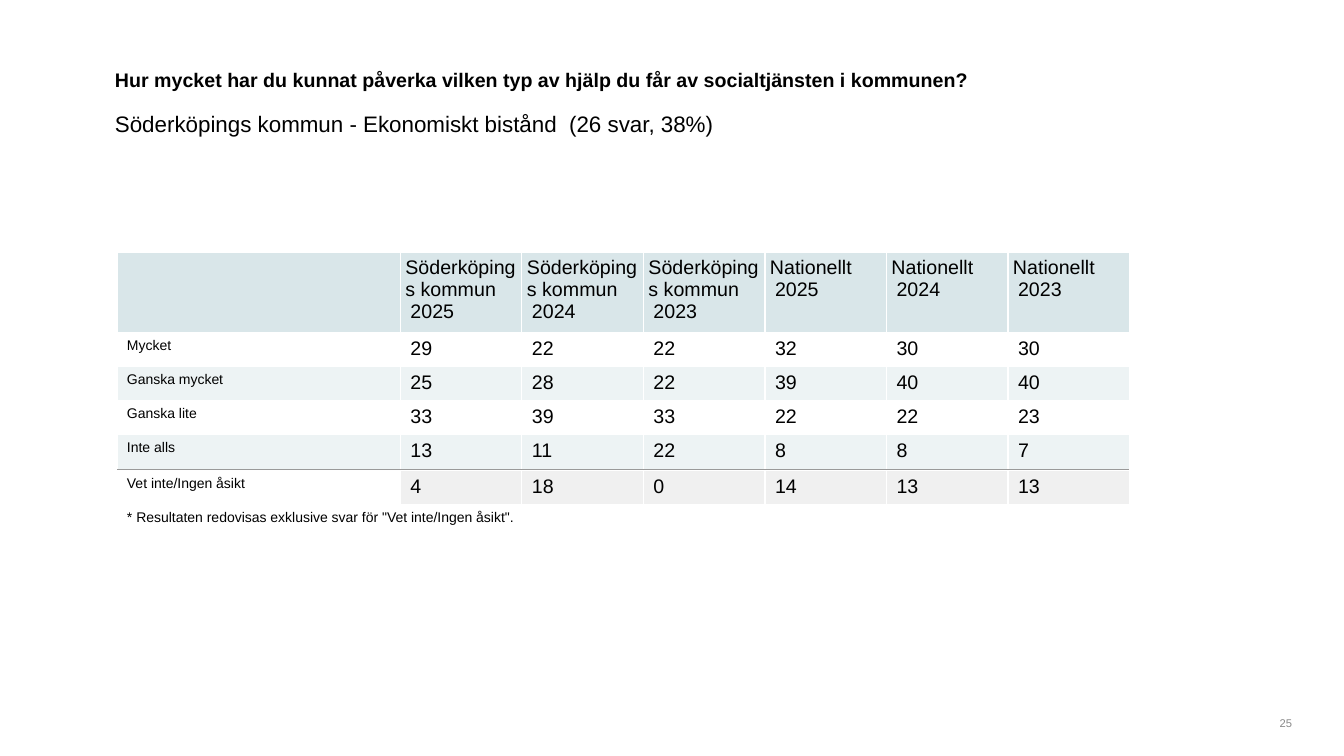
from lxml.etree import SubElement
from pptx import Presentation
from pptx.dml.color import RGBColor
from pptx.enum.text import MSO_ANCHOR, PP_ALIGN
from pptx.oxml.ns import qn
from pptx.util import Pt

BLACK = RGBColor(0x00, 0x00, 0x00)
PAGE_GREY = RGBColor(0x89, 0x89, 0x89)
HEADER_BLUE = RGBColor(0xD9, 0xE6, 0xE9)
BAND_BLUE = RGBColor(0xED, 0xF3, 0xF4)
NO_OPINION_GREY = RGBColor(0xF0, 0xF0, 0xF0)
RULE_GREY = RGBColor(0x99, 0x99, 0x99)

HEADERS = [f"{area}\n{year}" for area in ("Söderköpings kommun", "Nationellt")
           for year in (2025, 2024, 2023)]
ANSWERS = [
    ("Mycket", 29, 22, 22, 32, 30, 30),
    ("Ganska mycket", 25, 28, 22, 39, 40, 40),
    ("Ganska lite", 33, 39, 33, 22, 22, 23),
    ("Inte alls", 13, 11, 22, 8, 8, 7),
]
NO_OPINION = ("Vet inte/Ingen åsikt", 4, 18, 0, 14, 13, 13)
FOOTNOTE = '* Resultaten redovisas exklusive svar för "Vet inte/Ingen åsikt".'
HEADER_ROW, RULE_ROW, NO_OPINION_ROW, FOOTNOTE_ROW = 0, 5, 6, 7


def write_text(frame, text, size, color=BLACK, bold=False, align=PP_ALIGN.LEFT, indent=0):
    """Write one paragraph per line; only the last line is indented."""
    frame.word_wrap = True
    lines = text.split("\n")
    for number, line in enumerate(lines):
        paragraph = frame.paragraphs[0] if number == 0 else frame.add_paragraph()
        paragraph.alignment = align
        if indent and number == len(lines) - 1:
            paragraph._p.get_or_add_pPr().set("marL", str(Pt(indent)))
        run = paragraph.add_run()
        run.text = line
        run.font.name = "Arial"
        run.font.size = Pt(size)
        run.font.bold = bold
        run.font.color.rgb = color


def set_borders(cell, white_sides):
    """Draw the given sides in white and hide the others."""
    properties = cell._tc.get_or_add_tcPr()
    for position, side in enumerate("LRTB"):
        line = properties.makeelement(qn(f"a:ln{side}"), {"w": str(Pt(1))})
        if side in white_sides:
            fill = SubElement(line, qn("a:solidFill"))
            SubElement(fill, qn("a:srgbClr"), val="FFFFFF")
        else:
            SubElement(line, qn("a:noFill"))
        properties.insert(position, line)


presentation = Presentation()
presentation.slide_width, presentation.slide_height = Pt(960), Pt(540)
slide = presentation.slides.add_slide(presentation.slide_layouts[6])

# Question and respondents
question = slide.shapes.add_textbox(Pt(75), Pt(45), Pt(810), Pt(30))
write_text(question.text_frame,
           "Hur mycket har du kunnat påverka vilken typ av hjälp du får av "
           "socialtjänsten i kommunen?", 14, bold=True)
respondents = slide.shapes.add_textbox(Pt(75), Pt(75), Pt(810), Pt(30))
write_text(respondents.text_frame, "Söderköpings kommun - Ekonomiskt bistånd  (26 svar, 38%)", 16)

# Table of answers
rows = [("", *HEADERS), *ANSWERS, ("",) * 7, NO_OPINION, (FOOTNOTE,) + ("",) * 6]
row_heights = [57.3] + [24.3] * 4 + [1.4, 24.3, 20]
column_widths = [202.5] + [86.8] * 6
answers = slide.shapes.add_table(len(rows), len(column_widths), Pt(83.5), Pt(180),
                                 Pt(sum(column_widths)), Pt(sum(row_heights))).table
answers.first_row = answers.horz_banding = False
for column, width in zip(answers.columns, column_widths):
    column.width = Pt(width)
for row, height in zip(answers.rows, row_heights):
    row.height = Pt(height)
for row in (RULE_ROW, FOOTNOTE_ROW):
    answers.cell(row, 0).merge(answers.cell(row, 6))

row_fills = {HEADER_ROW: HEADER_BLUE, 2: BAND_BLUE, 4: BAND_BLUE,
             RULE_ROW: RULE_GREY, NO_OPINION_ROW: NO_OPINION_GREY}
row_borders = {RULE_ROW - 1: "LRT", RULE_ROW: "B"}
for row, values in enumerate(rows):
    for column, value in enumerate(values):
        cell = answers.cell(row, column)
        margin = 0 if row == RULE_ROW else 3.6
        cell.margin_left = cell.margin_right = Pt(margin)
        cell.margin_top = cell.margin_bottom = Pt(margin)
        if row in row_fills and (row, column) != (NO_OPINION_ROW, 0):
            cell.fill.solid()
            cell.fill.fore_color.rgb = row_fills[row]
        else:
            cell.fill.background()
        set_borders(cell, row_borders.get(row, "LRTB"))
        if value != "":
            is_label = column == 0
            write_text(cell.text_frame, str(value), 10 if is_label else 14, indent=3.6)
        else:
            SubElement(cell.text_frame.paragraphs[0]._p, qn("a:endParaRPr"), sz="100")

# Page number
page_number = slide.shapes.add_textbox(Pt(900), Pt(510), Pt(30), Pt(15))
page_number.text_frame.vertical_anchor = MSO_ANCHOR.BOTTOM
write_text(page_number.text_frame, "25", 8, color=PAGE_GREY, align=PP_ALIGN.RIGHT)

presentation.save("out.pptx")
